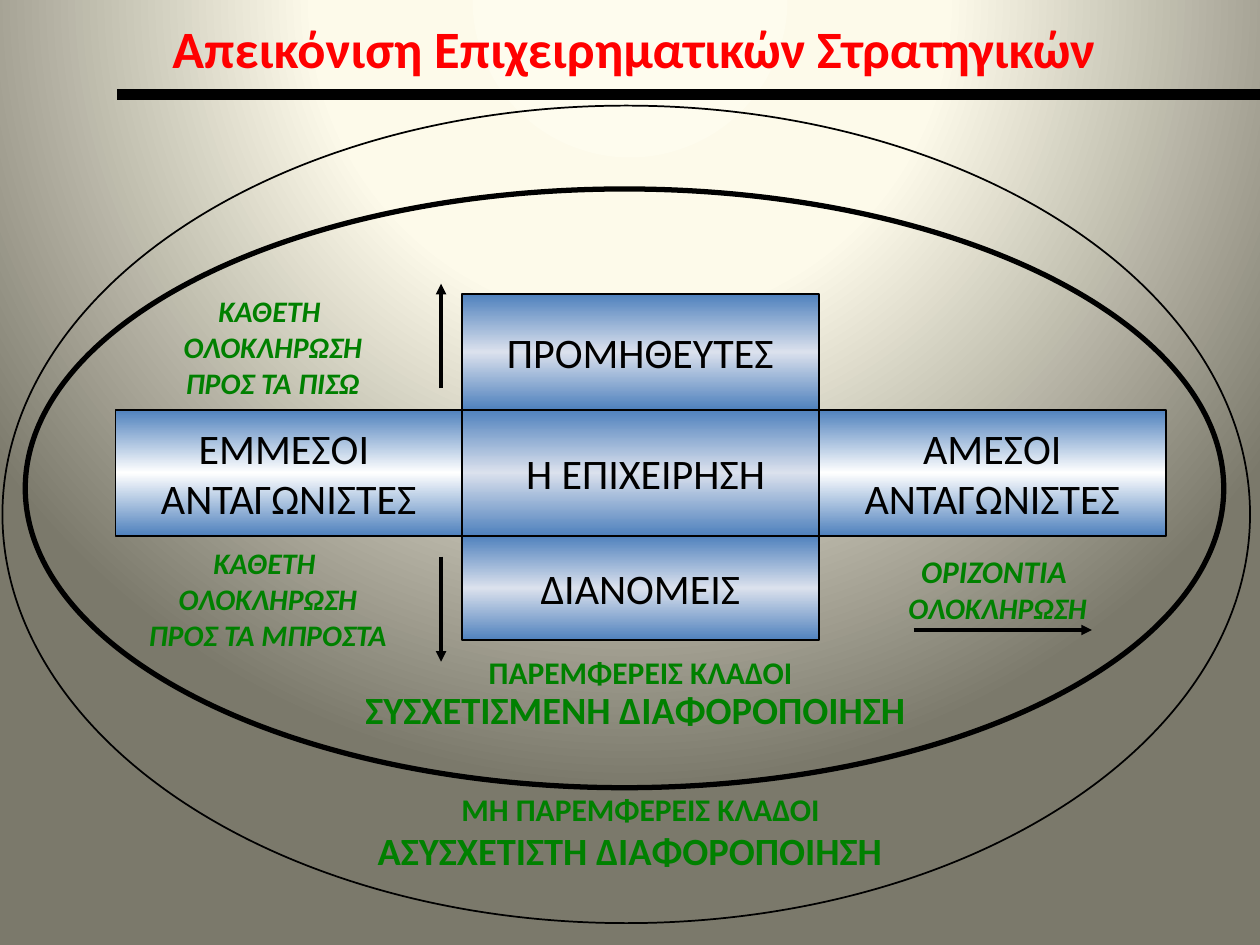
"""Build a slide that maps business strategies around a company."""
from dataclasses import dataclass

from pptx import Presentation
from pptx import util as u
from pptx.dml import color
from pptx.enum import shapes, text
from pptx.oxml import ns, parse_xml


@dataclass(frozen=True)
class Theme:
    """Colours, font and type sizes of the slide."""
    font: str = "Calibri"
    ink: str = "000000"
    title: str = "FF0000"
    strategy: str = "008000"
    edge: str = "4F81BD"
    core: str = "DBE1ED"
    rival: str = "FFFFFF"
    backdrop: tuple = ((0, "FEFCEE"), (40, "FDFAEA"), (100, "7B796B"))
    title_size: int = 30
    box_size: int = 24
    heading_size: int = 22
    label_size: int = 18
    note_size: int = 17


THEME = Theme()
LINEAR = '<a:lin ang="5400000" scaled="1"/>'
RADIAL = ('<a:path path="circle"><a:fillToRect l="50000" t="-80000" '
          'r="50000" b="180000"/></a:path>')


def rgb(value):
    """Return a colour from its hexadecimal form."""
    return color.RGBColor.from_string(value)


def place(shape, box):
    """Move and size a shape with centimetres."""
    shape.left, shape.top, shape.width, shape.height = map(u.Cm, box)


def paint_gradient(fill, element, stops, direction):
    """Give a fill its gradient stops and direction."""
    fill.gradient()
    stop_list = "".join(
        f'<a:gs pos="{position * 1000}"><a:srgbClr val="{value}"/></a:gs>'
        for position, value in stops)
    gradient = parse_xml(
        f'<a:gradFill {ns.nsdecls("a")} rotWithShape="1">'
        f'<a:gsLst>{stop_list}</a:gsLst>{direction}</a:gradFill>')
    current = element.find(".//" + ns.qn("a:gradFill"))
    current.getparent().replace(current, gradient)


def write(shape, lines, sizes, ink, bold=False, italic=False, wrap=False):
    """Write centred paragraphs, one for each line and size."""
    frame = shape.text_frame
    frame.text = "\n".join(lines)
    frame.word_wrap = wrap
    frame.auto_size = text.MSO_AUTO_SIZE.NONE
    frame.vertical_anchor = text.MSO_ANCHOR.MIDDLE
    for paragraph, size in zip(frame.paragraphs, sizes):
        paragraph.alignment = text.PP_ALIGN.CENTER
        font = paragraph.font
        font.name, font.size = THEME.font, u.Pt(size)
        font.bold, font.italic = bold, italic
        font.color.rgb = rgb(ink)


def add_outlined(slide, kind, box, weight):
    """Add a preset shape with a black outline and no fill."""
    shape = slide.shapes.add_shape(kind, *map(u.Cm, box))
    shape.shadow.inherit = False
    shape.fill.background()
    shape.line.color.rgb = rgb(THEME.ink)
    shape.line.width = u.Pt(weight)
    return shape


def add_player(slide, box, lines, middle):
    """Add a gradient box that names one market player."""
    shape = add_outlined(slide, shapes.MSO_SHAPE.RECTANGLE, box, 1)
    stops = ((0, THEME.edge), (50, middle), (100, THEME.edge))
    paint_gradient(shape.fill, shape.element, stops, LINEAR)
    write(shape, lines, [THEME.box_size] * len(lines), THEME.ink)


def add_label(slide, box, lines, sizes, italic=False):
    """Add a bold green strategy label."""
    label = slide.shapes.add_textbox(*map(u.Cm, box))
    write(label, lines, sizes, THEME.strategy, bold=True, italic=italic)


def add_line(slide, ends, weight, arrow=False):
    """Add a straight black line, with an arrowhead if asked."""
    line = slide.shapes.add_connector(
        shapes.MSO_CONNECTOR.STRAIGHT, *map(u.Cm, ends))
    line.line.color.rgb = rgb(THEME.ink)
    line.line.width = u.Pt(weight)
    if arrow:
        line.line._get_or_add_ln().append(
            parse_xml(f'<a:tailEnd {ns.nsdecls("a")} type="triangle"/>'))
    line.element.spPr.append(parse_xml(f'<a:effectLst {ns.nsdecls("a")}/>'))


def add_players(slide):
    """Add the cross of the company and its four neighbours."""
    left, centre, right, end = 2.33, 9.31, 16.51, 23.5
    top, middle, bottom, base = 5.93, 8.26, 10.8, 12.91
    row, column = bottom - middle, right - centre
    players = (
        ((centre, middle, 7.41, row), ["Η ΕΠΙΧΕΙΡΗΣΗ"], THEME.core),
        ((right, middle, end - right, row),
         ["ΑΜΕΣΟΙ", "ΑΝΤΑΓΩΝΙΣΤΕΣ"], THEME.rival),
        ((left, middle, centre - left, row),
         ["ΕΜΜΕΣΟΙ ", "ΑΝΤΑΓΩΝΙΣΤΕΣ"], THEME.rival),
        ((centre, bottom, column, base - bottom), ["ΔΙΑΝΟΜΕΙΣ"], THEME.core),
        ((centre, top, column, middle - top), ["ΠΡΟΜΗΘΕΥΤΕΣ"], THEME.core),
    )
    for box, lines, colour in players:
        add_player(slide, box, lines, colour)


def add_strategies(slide):
    """Add the integration and diversification labels with their arrows."""
    note, label, heading = THEME.note_size, THEME.label_size, THEME.heading_size
    integrations = (
        ((2.33, 10.8, 6.14, 2.54),
         ["ΚΑΘΕΤΗ ", "ΟΛΟΚΛΗΡΩΣΗ", "ΠΡΟΣ ΤΑ ΜΠΡΟΣΤΑ"], [note] * 3),
        ((2.75, 5.72, 5.5, 2.54),
         ["ΚΑΘΕΤΗ ", "ΟΛΟΚΛΗΡΩΣΗ", "ΠΡΟΣ ΤΑ ΠΙΣΩ"], [note] * 3),
        ((17.78, 10.8, 4.66, 2.12),
         ["ΟΡΙΖΟΝΤΙΑ ", "ΟΛΟΚΛΗΡΩΣΗ"], [label, note]),
    )
    for box, lines, sizes in integrations:
        add_label(slide, box, lines, sizes, italic=True)
    for ends in ((8.89, 7.83, 8.89, 5.72), (8.89, 11.22, 8.89, 13.34),
                 (18.42, 12.7, 22.01, 12.7)):
        add_line(slide, ends, 2, arrow=True)
    diversifications = (
        ((9.74, 13.12, 6.35, 0.85), "ΠΑΡΕΜΦΕΡΕΙΣ ΚΛΑΔΟΙ", label),
        ((8.26, 13.55, 9.1, 1.48), "ΣΥΣΧΕΤΙΣΜΕΝΗ ΔΙΑΦΟΡΟΠΟΙΗΣΗ", heading),
        ((9.74, 15.88, 6.35, 0.85), "ΜΗ ΠΑΡΕΜΦΕΡΕΙΣ ΚΛΑΔΟΙ", label),
        ((7.62, 16.93, 10.16, 0.42), "ΑΣΥΣΧΕΤΙΣΤΗ ΔΙΑΦΟΡΟΠΟΙΗΣΗ", heading),
    )
    for box, line, size in diversifications:
        add_label(slide, box, [line], [size])


def main():
    """Build and save the presentation."""
    presentation = Presentation()
    presentation.slide_width = u.Cm(25.4)
    presentation.slide_height = u.Cm(19.05)
    slide = presentation.slides.add_slide(presentation.slide_layouts[5])
    paint_gradient(slide.background.fill, slide.element, THEME.backdrop, RADIAL)
    for box, weight in (((0.05, 2.13, 25.15, 16.48), 1),
                        ((0.51, 3.81, 24.16, 12.07), 3)):
        add_outlined(slide, shapes.MSO_SHAPE.OVAL, box, weight)
    title = slide.shapes.title
    place(title, (0.58, 0, 24.41, 1.91))
    write(title, ["Απεικόνιση Επιχειρηματικών Στρατηγικών"],
          [THEME.title_size], THEME.title, bold=True, wrap=True)
    add_line(slide, (2.36, 1.91, 25.4, 1.91), 6)
    add_players(slide)
    add_strategies(slide)
    presentation.save("out.pptx")


if __name__ == "__main__":
    main()
